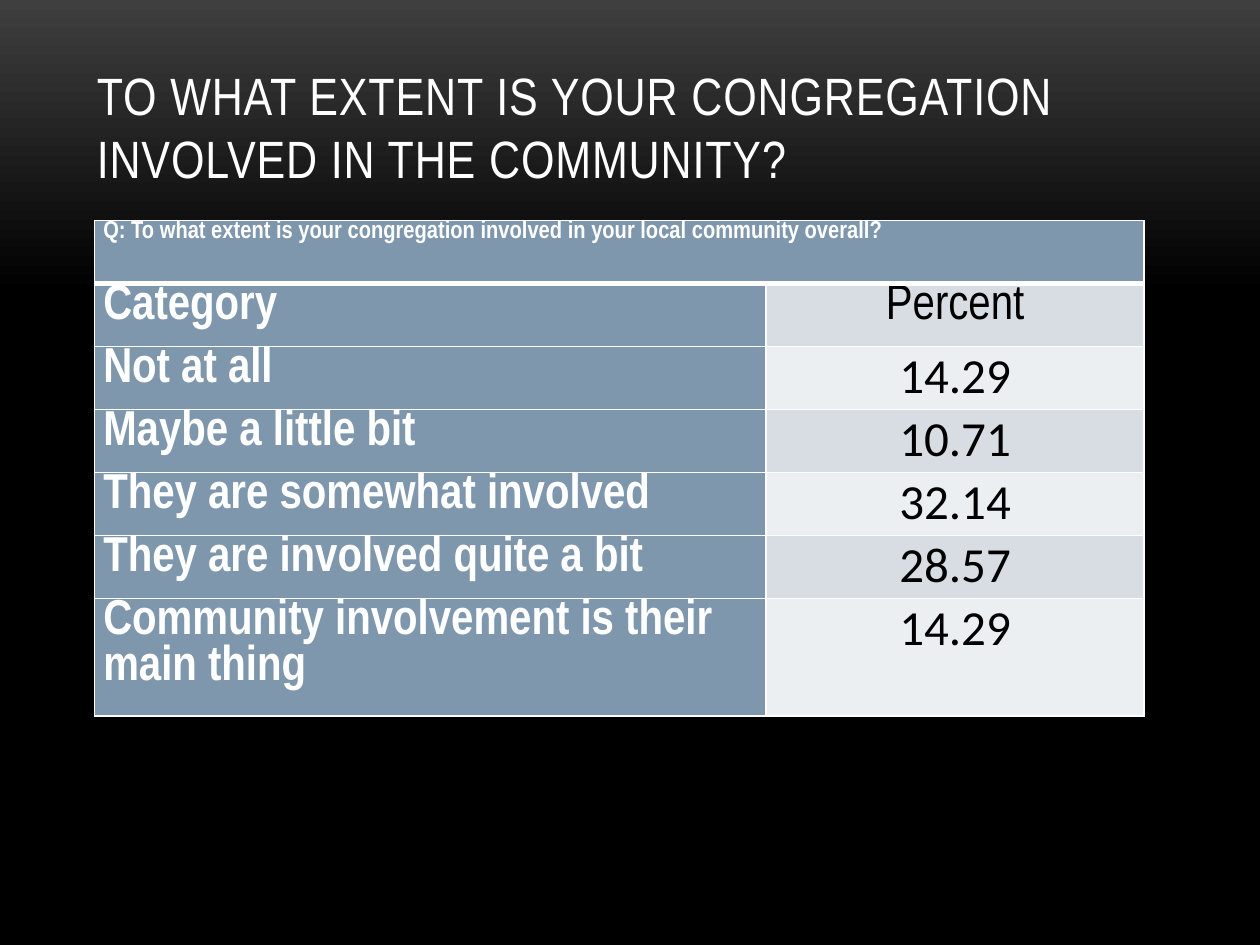
from dataclasses import dataclass

from lxml import etree
from pptx import Presentation
from pptx.dml.color import RGBColor
from pptx.enum.text import MSO_ANCHOR, PP_ALIGN
from pptx.oxml.ns import qn
from pptx.util import Inches, Pt

LEFT, CENTER = PP_ALIGN.LEFT, PP_ALIGN.CENTER
TOP, BOTTOM = MSO_ANCHOR.TOP, MSO_ANCHOR.BOTTOM
BLANK_LAYOUT = 6


@dataclass(frozen=True)
class Theme:
    glow: str = "3F3F3F"
    black: str = "000000"
    white: str = "FFFFFF"
    label_fill: str = "7E97AD"
    bands: tuple[str, str] = ("D8DDE3", "ECEFF1")
    text_font: str = "Arial Narrow"
    number_font: str = "Calibri"
    title_size: float = 30
    question_size: float = 14
    body_size: float = 28
    rule: float = 1
    heavy_rule: float = 3


@dataclass(frozen=True)
class TextStyle:
    size: float
    color: str
    font: str
    bold: bool = False
    align: PP_ALIGN = LEFT


@dataclass(frozen=True)
class Answer:
    category: str
    percent: str


THEME = Theme()
TITLE = TextStyle(THEME.title_size, THEME.white, THEME.text_font)
QUESTION = TextStyle(THEME.question_size, THEME.white, THEME.text_font, bold=True)
LABEL = TextStyle(THEME.body_size, THEME.white, THEME.text_font, bold=True)
HEADING = TextStyle(THEME.body_size, THEME.black, THEME.text_font, align=CENTER)
NUMBER = TextStyle(THEME.body_size, THEME.black, THEME.number_font, align=CENTER)

TITLE_TEXT = "TO WHAT EXTENT IS YOUR CONGREGATION INVOLVED IN THE COMMUNITY?"
QUESTION_TEXT = "Q: To what extent is your congregation involved in your local community overall?"
ANSWERS = [
    Answer("Category", "Percent"),
    Answer("Not at all", "14.29"),
    Answer("Maybe a little bit", "10.71"),
    Answer("They are somewhat involved", "32.14"),
    Answer("They are involved quite a bit", "28.57"),
    Answer("Community involvement is their main thing", "14.29"),
]
COLUMN_WIDTHS = (5.33, 3)
ROW_HEIGHT = 0.5


def write(frame, text: str, style: TextStyle):
    """Fill the frame's first paragraph and return its run."""
    paragraph = frame.paragraphs[0]
    paragraph.alignment = style.align
    run = paragraph.add_run()
    run.text = text
    font_format = {"size": Pt(style.size), "name": style.font, "bold": style.bold}
    for name, value in font_format.items():
        setattr(run.font, name, value)
    run.font.color.rgb = RGBColor.from_string(style.color)
    return run


def set_borders(cell, top: float, bottom: float) -> None:
    widths = {"a:lnL": THEME.rule, "a:lnR": THEME.rule, "a:lnT": top, "a:lnB": bottom}
    properties = cell._tc.get_or_add_tcPr()
    for position, (tag, width) in enumerate(widths.items()):
        line = etree.Element(qn(tag), w=str(Pt(width)))
        fill = etree.SubElement(line, qn("a:solidFill"))
        etree.SubElement(fill, qn("a:srgbClr"), val=THEME.white)
        properties.insert(position, line)


def fill_cell(cell, text: str, style: TextStyle, fill: str) -> None:
    cell_format = {
        "margin_left": Inches(0.07),
        "margin_right": Inches(0.07),
        "margin_top": 0,
        "margin_bottom": 0,
        "vertical_anchor": TOP,
    }
    for name, value in cell_format.items():
        setattr(cell, name, value)
    cell.fill.solid()
    cell.fill.fore_color.rgb = RGBColor.from_string(fill)
    write(cell.text_frame, text, style)


def paint_background(slide) -> None:
    fill = slide.background.fill
    fill.gradient()
    fill.gradient_angle = 270
    stops = ((0, THEME.glow), (0.31, THEME.black))
    for stop, (position, color) in zip(fill.gradient_stops, stops):
        stop.position = position
        stop.color.rgb = RGBColor.from_string(color)


def add_title(slide) -> None:
    box = slide.shapes.add_textbox(Inches(0.67), Inches(0.3), Inches(8.67), Inches(1.25))
    frame = box.text_frame
    frame.word_wrap = True
    frame.vertical_anchor = BOTTOM
    run = write(frame, TITLE_TEXT, TITLE)
    run.font._element.set("spc", "50")


def add_answer_table(slide) -> None:
    row_count = len(ANSWERS) + 1
    table = slide.shapes.add_table(
        row_count, len(COLUMN_WIDTHS), Inches(0.75), Inches(1.75),
        Inches(sum(COLUMN_WIDTHS)), Inches(ROW_HEIGHT * row_count),
    ).table
    for column, width in zip(table.columns, COLUMN_WIDTHS):
        column.width = Inches(width)

    question = table.cell(0, 0)
    question.merge(table.cell(0, 1))
    fill_cell(question, QUESTION_TEXT, QUESTION, THEME.label_fill)

    for index, answer in enumerate(ANSWERS):
        value_style = HEADING if index == 0 else NUMBER
        fill_cell(table.cell(index + 1, 0), answer.category, LABEL, THEME.label_fill)
        fill_cell(table.cell(index + 1, 1), answer.percent, value_style, THEME.bands[index % 2])

    for index, row in enumerate(table.rows):
        top = THEME.heavy_rule if index == 1 else THEME.rule
        bottom = THEME.heavy_rule if index == 0 else THEME.rule
        for cell in row.cells:
            set_borders(cell, top, bottom)


def main() -> None:
    presentation = Presentation()
    presentation.slide_width = Inches(10)
    presentation.slide_height = Inches(7.5)
    slide = presentation.slides.add_slide(presentation.slide_layouts[BLANK_LAYOUT])
    paint_background(slide)
    add_title(slide)
    add_answer_table(slide)
    presentation.save("out.pptx")


if __name__ == "__main__":
    main()
